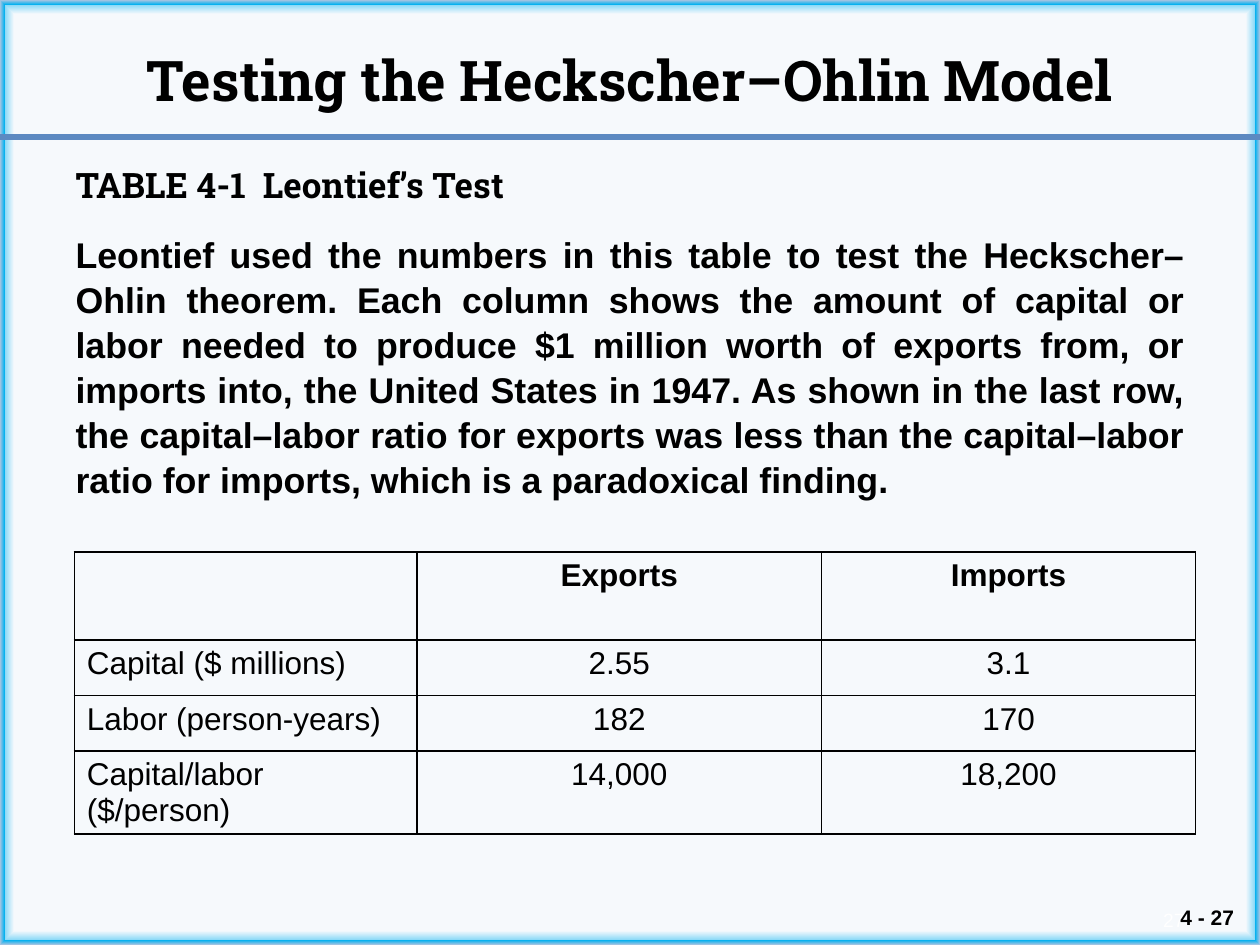
from dataclasses import dataclass
from lxml.etree import SubElement
from pptx import Presentation
from pptx.dml.color import RGBColor
from pptx.enum.shapes import MSO_CONNECTOR
from pptx.enum.text import MSO_ANCHOR, MSO_AUTO_SIZE, PP_ALIGN
from pptx.oxml import parse_xml
from pptx.oxml.ns import nsdecls, qn
from pptx.util import Inches, Pt

BLACK, WHITE, BLUE = "000000", "FFFFFF", "5C89C1"
STOPS = [(97, "F6F9FC"), (99, "87D8F7"), (99, "00B0F0"),
         (100, "B0C6E1"), (100, "CAD9EB")]
COLS = [2.72, 3.21, 2.97]
ROWS = [0.7, 0.44, 0.44, 0.66]
DATA = [
    ["", "Exports", "Imports"],
    ["Capital ($ millions)", "2.55", "3.1"],
    ["Labor (person-years)", "182", "170"],
    ["Capital/labor ($/person)", "14,000", "18,200"],
]


@dataclass
class Style:
    size: float
    face: str = "Arial"
    bold: bool = True
    color: str = BLACK
    align: PP_ALIGN = PP_ALIGN.LEFT
    before: float = 0
    lines: float = 1.0


def rgb(code: str) -> RGBColor:
    return RGBColor.from_string(code)


def write(frame, text: str, style: Style) -> None:
    frame.text = text
    para = frame.paragraphs[0]
    para.alignment = style.align
    para.space_before = Pt(style.before)
    para.line_spacing = style.lines
    font = para.font
    font.size, font.name, font.bold = Pt(style.size), style.face, style.bold
    font.color.rgb = rgb(style.color)


def place(shape, box: tuple, text: str, style: Style,
          anchor=MSO_ANCHOR.TOP, wrap: bool = True) -> None:
    shape.left, shape.top, shape.width, shape.height = map(Inches, box)
    frame = shape.text_frame
    frame.word_wrap = wrap
    frame.auto_size = MSO_AUTO_SIZE.NONE
    frame.vertical_anchor = anchor
    write(frame, text, style)


def plain(shape) -> None:
    """Remove the bullet and its indent."""
    props = shape.text_frame.paragraphs[0]._p.get_or_add_pPr()
    props.set("marL", "0")
    props.set("indent", "0")
    SubElement(props, qn("a:buNone"))


def border(cell) -> None:
    props = cell._tc.get_or_add_tcPr()
    for at, side in enumerate(("lnL", "lnR", "lnT", "lnB")):
        props.insert(at, parse_xml(
            f'<a:{side} {nsdecls("a")} w="12700"><a:solidFill>'
            f'<a:srgbClr val="{BLACK}"/></a:solidFill></a:{side}>'))


def backdrop(slide) -> None:
    stops = "".join(f'<a:gs pos="{pos * 1000}"><a:srgbClr val="{code}"/></a:gs>'
                    for pos, code in STOPS)
    slide._element.cSld.insert(0, parse_xml(
        f'<p:bg {nsdecls("p", "a")}><p:bgPr><a:gradFill><a:gsLst>{stops}</a:gsLst>'
        '<a:path path="shape"><a:fillToRect l="50000" t="50000" r="50000" b="50000"/>'
        '</a:path></a:gradFill><a:effectLst/></p:bgPr></p:bg>'))


def rule(slide, top: float) -> None:
    line = slide.shapes.add_connector(
        MSO_CONNECTOR.STRAIGHT, 0, Inches(top), Inches(10), Inches(top))
    line.line.color.rgb = rgb(BLUE)
    line.line.width = Pt(3.5)
    SubElement(line._element.spPr, qn("a:effectLst"))


def grid(slide) -> None:
    table = slide.shapes.add_table(
        len(ROWS), len(COLS), Inches(0.59), Inches(4.38),
        Inches(sum(COLS)), Inches(sum(ROWS))).table
    table.first_row = table.horz_banding = False
    for col, width in zip(table.columns, COLS):
        col.width = Inches(width)
    for row, height in zip(table.rows, ROWS):
        row.height = Inches(height)
    for r, line in enumerate(DATA):
        for c, text in enumerate(line):
            cell = table.cell(r, c)
            cell.fill.background()
            border(cell)
            side = PP_ALIGN.CENTER if c else PP_ALIGN.LEFT
            write(cell.text_frame, text, Style(18, bold=r == 0, align=side))


def main() -> None:
    deck = Presentation()
    deck.slide_width, deck.slide_height = Inches(10), Inches(7.5)
    slide = deck.slides.add_slide(deck.slide_layouts[3])
    shapes = slide.shapes
    title, label, body = slide.placeholders
    backdrop(slide)
    rule(slide, 1.09)

    # Page numbers
    place(shapes.add_textbox(0, 0, 0, 0), (7.17, 7.1, 2.33, 0.4), "27",
          Style(11, bold=False, color=WHITE, align=PP_ALIGN.RIGHT),
          MSO_ANCHOR.MIDDLE)
    place(shapes.add_textbox(0, 0, 0, 0), (9.27, 7.13, 0.65, 0.3), "4 - 27",
          Style(12), wrap=False)

    # Title, table label and explanation
    place(title, (0.5, 0, 9, 1.25), "Testing the Heckscher–Ohlin Model",
          Style(32, "Roboto Slab", align=PP_ALIGN.CENTER), MSO_ANCHOR.MIDDLE)
    place(label, (0.5, 1.25, 4.26, 0.61), "TABLE 4-1  Leontief’s Test",
          Style(20, "Roboto Slab", align=PP_ALIGN.JUSTIFY, before=6.2))
    place(body, (0.5, 1.78, 9, 2.11),
          "Leontief used the numbers in this table to test the Heckscher–Ohlin "
          "theorem. Each column shows the amount of capital or labor needed to "
          "produce $1 million worth of exports from, or imports into, the United "
          "States in 1947. As shown in the last row, the capital–labor ratio for "
          "exports was less than the capital–labor ratio for imports, which is a "
          "paradoxical finding.",
          Style(20.4, align=PP_ALIGN.JUSTIFY, before=4, lines=1.05))
    plain(label)
    plain(body)

    grid(slide)
    deck.save("out.pptx")


if __name__ == "__main__":
    main()
